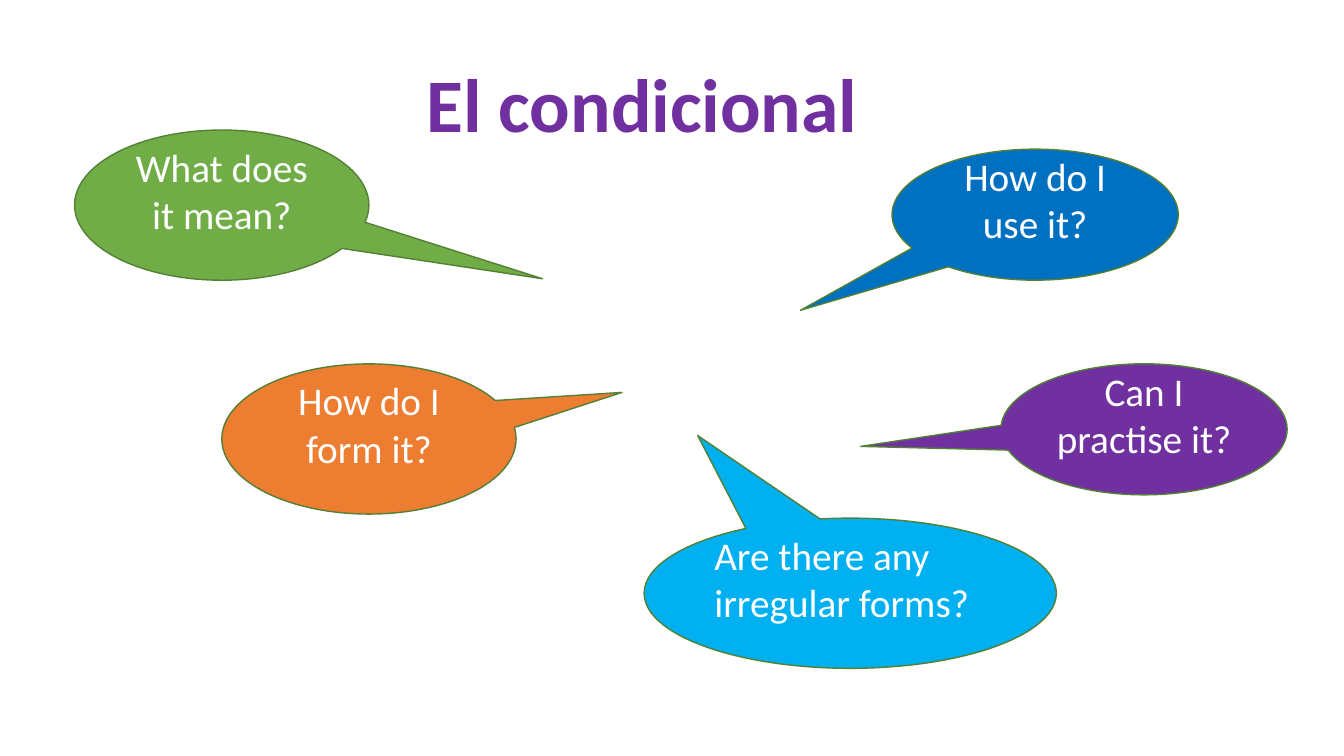
from dataclasses import dataclass

from pptx import Presentation
from pptx.dml.color import RGBColor
from pptx.enum.shapes import MSO_SHAPE
from pptx.enum.text import MSO_ANCHOR, MSO_AUTO_SIZE, PP_ALIGN
from pptx.util import Inches, Pt

CALLOUT = MSO_SHAPE.OVAL_CALLOUT
LEFT, CENTER = PP_ALIGN.LEFT, PP_ALIGN.CENTER
MIDDLE = MSO_ANCHOR.MIDDLE
FIT_SHAPE = MSO_AUTO_SIZE.SHAPE_TO_FIT_TEXT

SLIDE_WIDTH, SLIDE_HEIGHT = Inches(13.33), Inches(7.5)
COLUMN, ROW = SLIDE_WIDTH / 40, SLIDE_HEIGHT / 30


@dataclass(frozen=True)
class Theme:
    font: str = "Calibri"
    title_size: int = 54
    question_size: int = 28
    outline_width: int = 1
    white: str = "FFFFFF"
    outline: str = "538035"
    green: str = "70AD47"
    orange: str = "ED7D31"
    sky: str = "00B0F0"
    blue: str = "0070C0"
    purple: str = "7030A0"


THEME = Theme()

# Bubble sizes in columns and rows
LARGE, WIDE, SMALL = (8.76, 5.96), (12.27, 5.96), (8.52, 5.2)

# Question, column, row, size, pointer tip, fill, alignment
QUESTIONS = [
    ("What does it mean?", 2.22, 5.16, LARGE, (1.09, 0.49), THEME.green, CENTER),
    ("How do I form it?", 6.6, 14.44, LARGE, (0.86, -0.31), THEME.orange, CENTER),
    ("Are there any irregular forms?", 19.17, 20.56, WIDE, (-0.37, -1.05), THEME.sky, LEFT),
    ("How do I use it?", 26.55, 5.92, SMALL, (-0.82, 0.73), THEME.blue, CENTER),
    ("Can I practise it?", 29.79, 14.44, SMALL, (-0.99, 0.13), THEME.purple, CENTER),
]


def grid_box(column, row, columns, rows):
    return (round(column * COLUMN), round(row * ROW),
            round(columns * COLUMN), round(rows * ROW))


def apply_format(target, values):
    for name, value in values.items():
        setattr(target, name, value)


def write_text(shape, text, size, color, alignment, frame_format, bold=False):
    frame = shape.text_frame
    apply_format(frame, frame_format)
    paragraph = frame.paragraphs[0]
    paragraph.alignment = alignment
    run = paragraph.add_run()
    run.text = text
    apply_format(run.font, {"name": THEME.font, "size": Pt(size), "bold": bold})
    run.font.color.rgb = RGBColor.from_string(color)


def add_title(slide, text):
    box = slide.shapes.add_textbox(*grid_box(12.39, 2.08, 13.56, 4.04))
    write_text(box, text, THEME.title_size, THEME.purple, LEFT,
               {"word_wrap": False, "auto_size": FIT_SHAPE}, bold=True)


def add_bubble(slide, text, column, row, size, tip, fill, alignment):
    shape = slide.shapes.add_shape(CALLOUT, *grid_box(column, row, *size))
    shape.shadow.inherit = False
    for index, offset in enumerate(tip):
        shape.adjustments[index] = offset
    shape.fill.solid()
    shape.fill.fore_color.rgb = RGBColor.from_string(fill)
    shape.line.color.rgb = RGBColor.from_string(THEME.outline)
    shape.line.width = Pt(THEME.outline_width)
    # The deep bottom margin lifts the question above the middle
    write_text(shape, text, THEME.question_size, THEME.white, alignment,
               {"word_wrap": True, "vertical_anchor": MIDDLE,
                "margin_bottom": Inches(0.35)})


def main():
    presentation = Presentation()
    apply_format(presentation, {"slide_width": SLIDE_WIDTH, "slide_height": SLIDE_HEIGHT})
    slide = presentation.slides.add_slide(presentation.slide_layouts[6])

    # Heading
    add_title(slide, "El condicional")

    # Question bubbles
    for question in QUESTIONS:
        add_bubble(slide, *question)

    presentation.save("out.pptx")


if __name__ == "__main__":
    main()
